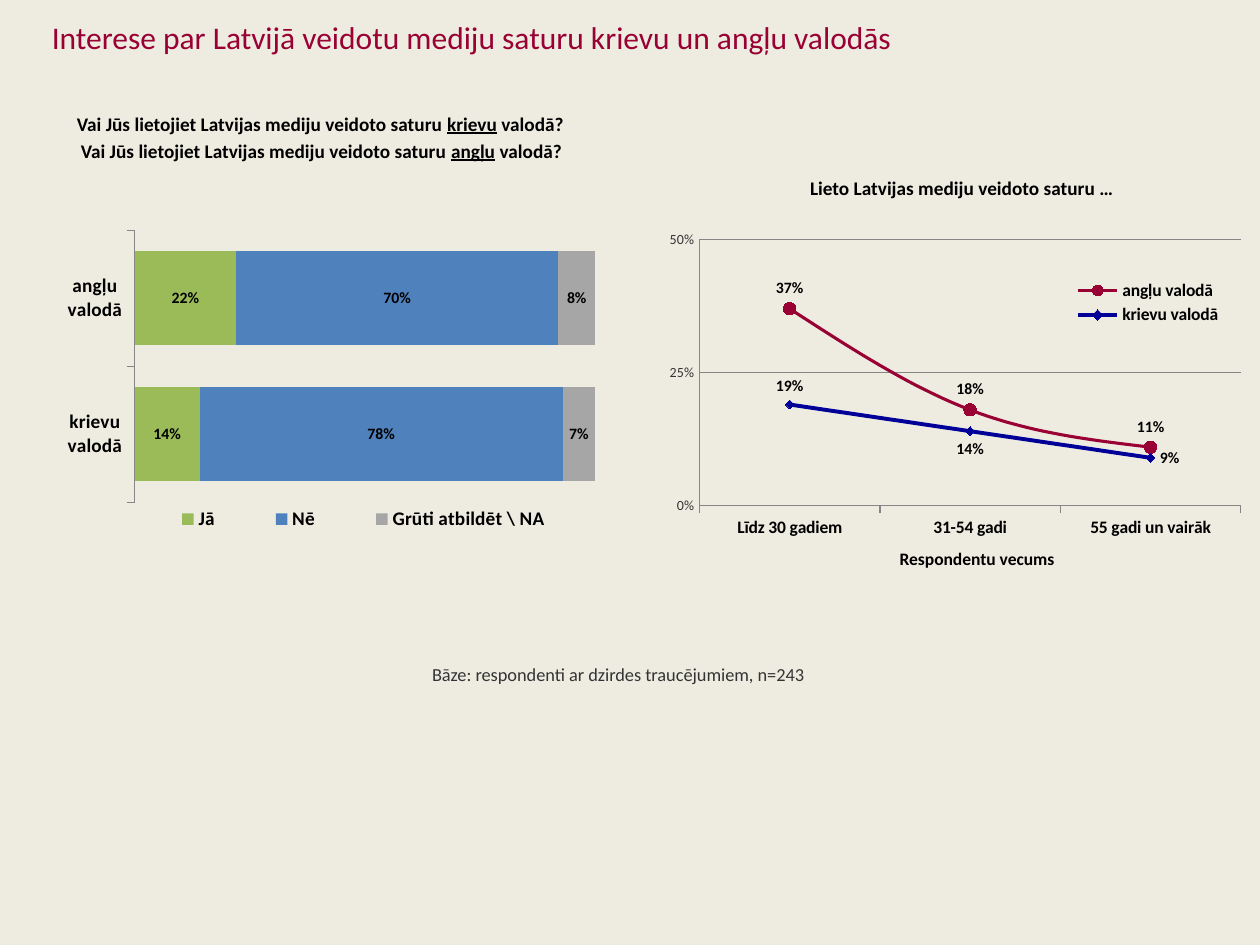
from dataclasses import dataclass

from lxml.etree import SubElement
from pptx import Presentation
from pptx.chart.data import CategoryChartData
from pptx.dml.color import RGBColor
from pptx.enum.chart import XL_CHART_TYPE as ChartType
from pptx.enum.chart import XL_LABEL_POSITION as LabelPosition
from pptx.enum.chart import XL_LEGEND_POSITION as LegendPosition
from pptx.enum.chart import XL_MARKER_STYLE as Marker
from pptx.enum.chart import XL_TICK_LABEL_POSITION as TickLabels
from pptx.enum.chart import XL_TICK_MARK as TickMark
from pptx.enum.text import MSO_ANCHOR as Anchor
from pptx.enum.text import MSO_AUTO_SIZE as AutoSize
from pptx.enum.text import PP_ALIGN as Align
from pptx.oxml.ns import qn
from pptx.util import Cm, Pt


@dataclass(frozen=True)
class Theme:
    """Colours, font and type sizes of the slide."""
    font: str = "Calibri"
    background: str = "EEECE1"
    accent: str = "990033"
    navy: str = "000099"
    text: str = "000000"
    muted: str = "333333"
    axis: str = "868686"
    yes: str = "9BBB59"
    no: str = "4F81BD"
    unsure: str = "A6A6A6"
    title: float = 18
    heading: float = 11
    note: float = 10.5
    small: float = 10
    label: float = 9
    tick: float = 8


@dataclass(frozen=True)
class Box:
    """Rectangle in centimetres."""
    left: float
    top: float
    width: float
    height: float

    def inside(self, left, top, width, height):
        """Return a box placed relative to this one."""
        return Box(self.left + left, self.top + top, width, height)

    def lengths(self):
        """Return the four lengths for python-pptx."""
        return [Cm(value) for value in (self.left, self.top, self.width, self.height)]


THEME = Theme()
LANGUAGES = ("angļu valodā", "krievu valodā")


def format_font(font, size, color=THEME.text, bold=False):
    """Apply the theme font with a size, colour and weight."""
    font.name, font.size, font.bold = THEME.font, Pt(size), bold
    font.color.rgb = RGBColor.from_string(color)


def write_text(shape, paragraphs, size, color=THEME.text, bold=False, align=Align.LEFT,
               anchor=Anchor.TOP, margins=None, indents=()):
    """Write paragraphs made of (text, underlined) runs into a shape."""
    frame = shape.text_frame
    frame.word_wrap, frame.auto_size, frame.vertical_anchor = True, AutoSize.NONE, anchor
    if margins is not None:
        frame.margin_left = frame.margin_right = Cm(margins)
        frame.margin_top = frame.margin_bottom = Cm(margins)
    for index, runs in enumerate(paragraphs):
        paragraph = frame.add_paragraph() if index else frame.paragraphs[0]
        paragraph.alignment = align
        paragraph.space_before = Pt(size * 0.2 if index else 0)
        if index < len(indents):
            paragraph._p.get_or_add_pPr().set("marL", str(Cm(indents[index])))
        for text, underlined in runs:
            run = paragraph.add_run()
            run.text = text
            format_font(run.font, size, color, bold)
            if underlined:
                run.font.underline = True


def add_text(slide, box, paragraphs, **style):
    """Add a text box."""
    write_text(slide.shapes.add_textbox(*box.lengths()), paragraphs, **style)


def set_layout(parent, index, fractions, inner=False):
    """Give a plot area or legend a fixed place within its chart."""
    for old in parent.findall(qn("c:layout")):
        parent.remove(old)
    layout = SubElement(parent, qn("c:layout"))
    parent.insert(index, layout)
    manual = SubElement(layout, qn("c:manualLayout"))
    settings = [("layoutTarget", "inner")] if inner else []
    settings += [("xMode", "edge"), ("yMode", "edge"), *zip("xywh", fractions)]
    for name, value in settings:
        SubElement(manual, qn(f"c:{name}")).set("val", str(value))


def add_chart(slide, box, kind, categories, series, size, plot, legend):
    """Add a percentage chart with a placed plot area and legend."""
    data = CategoryChartData(number_format="0%")
    data.categories = categories
    for name, values in series:
        data.add_series(name, values)
    chart = slide.shapes.add_chart(kind, *box.lengths(), data).chart
    chart.has_title = False
    format_font(chart.font, THEME.title)
    chart.has_legend = True
    chart.legend.position = LegendPosition.RIGHT
    chart.legend.include_in_layout = False
    format_font(chart.legend.font, size, bold=True)
    set_layout(chart._chartSpace.chart.plotArea, 0, plot, inner=True)
    set_layout(chart.legend._element, 1, legend)
    axis = chart.category_axis
    axis.major_tick_mark, axis.minor_tick_mark = TickMark.OUTSIDE, TickMark.NONE
    axis.has_major_gridlines = False
    format_line(axis.format.line, THEME.axis, 0.75)
    format_font(axis.tick_labels.font, size, bold=True)
    chart.plots[0].vary_by_categories = False
    for item in chart.plots[0].series:
        labels = item.data_labels
        labels.show_value = True
        labels.number_format, labels.number_format_is_linked = "0%", False
        format_font(labels.font, THEME.label, bold=True)
    return chart


def format_line(line, color, width):
    """Set the colour and width of a line."""
    line.color.rgb = RGBColor.from_string(color)
    line.width = Pt(width)


def add_usage_panel(slide, box):
    """Place the two questions above the stacked bars."""
    question = "Vai Jūs lietojiet Latvijas mediju veidoto saturu "
    add_text(slide, box.inside(0.41, 0, 12.8, 1.6),
             [[(question, False), (language, True), (" valodā?", False)]
              for language in ("krievu", "angļu")],
             size=THEME.heading, bold=True, indents=(0, 0.08))
    series = [("Jā", (0.14, 0.22)), ("Nē", (0.78, 0.7)),
              ("Grūti atbildēt \\ NA", (0.07, 0.08))]
    chart = add_chart(slide, box.inside(0, 2.29, 11.2, 6.5), ChartType.BAR_STACKED_100,
                      LANGUAGES[::-1], series, THEME.heading,
                      plot=(0.163, 0.034, 0.829, 0.844), legend=(0.15, 0.88, 0.85, 0.1))
    chart.plots[0].gap_width, chart.plots[0].overlap = 45, 100
    axis = chart.value_axis
    axis.has_major_gridlines, axis.visible = False, False
    axis.minimum_scale, axis.maximum_scale = 0, 1
    for item, color in zip(chart.plots[0].series, (THEME.yes, THEME.no, THEME.unsure)):
        item.format.fill.solid()
        item.format.fill.fore_color.rgb = RGBColor.from_string(color)


def add_age_panel(slide, box):
    """Place the heading, the age lines and the axis caption."""
    chart = add_chart(slide, box.inside(0, 1.17, 11.81, 6.4), ChartType.LINE_MARKERS,
                      ("Līdz 30 gadiem", "31-54 gadi", "55 gadi un vairāk"),
                      zip(LANGUAGES, ((0.37, 0.18, 0.11), (0.19, 0.14, 0.09))), THEME.small,
                      plot=(0.067, 0.036, 0.924, 0.839), legend=(0.7, 0.15, 0.265, 0.17))
    axis = chart.value_axis
    axis.minimum_scale, axis.maximum_scale, axis.major_unit = 0, 0.5, 0.25
    axis.major_tick_mark = axis.minor_tick_mark = TickMark.NONE
    axis.tick_label_position = TickLabels.NEXT_TO_AXIS
    axis.tick_labels.number_format, axis.tick_labels.number_format_is_linked = "0%", False
    format_font(axis.tick_labels.font, THEME.tick, THEME.muted)
    format_line(axis.format.line, THEME.axis, 0.75)
    format_line(axis.major_gridlines.format.line, THEME.axis, 0.75)
    styles = [(THEME.accent, 1.75, Marker.CIRCLE, 7, True, LabelPosition.ABOVE),
              (THEME.navy, 2.25, Marker.DIAMOND, 5, False, LabelPosition.BELOW)]
    lines = chart.plots[0].series
    for item, (color, width, marker, size, smooth, position) in zip(lines, styles):
        item.smooth = smooth
        format_line(item.format.line, color, width)
        item.marker.style, item.marker.size = marker, size
        item.marker.format.fill.solid()
        item.marker.format.fill.fore_color.rgb = RGBColor.from_string(color)
        format_line(item.marker.format.line, color, 0.75)
        item.data_labels.position = position
    for index, position in ((0, LabelPosition.ABOVE), (2, LabelPosition.RIGHT)):
        label = lines[1].points[index].data_label
        format_font(label.font, THEME.label, bold=True)
        label.position = position
    captions = [("Lieto Latvijas mediju veidoto saturu …", (0.58, 0, 11, 0.69), THEME.heading),
                ("Respondentu vecums", (2.79, 7.49, 7.19, 0.69), THEME.small)]
    for text, place, size in captions:
        add_text(slide, box.inside(*place), [[(text, False)]],
                 size=size, bold=True, align=Align.CENTER)


def add_title(slide, box, text):
    """Move and format the title placeholder."""
    title = slide.shapes.title
    title.left, title.top, title.width, title.height = box.lengths()
    write_text(title, [[(text, False)]], size=THEME.title, color=THEME.accent,
               anchor=Anchor.MIDDLE)


def main():
    """Build and save the slide."""
    presentation = Presentation()
    presentation.slide_width, presentation.slide_height = Cm(25.4), Cm(19.05)
    slide = presentation.slides.add_slide(presentation.slide_layouts.get_by_name("Title Only"))
    slide.background.fill.solid()
    slide.background.fill.fore_color.rgb = RGBColor.from_string(THEME.background)
    add_title(slide, Box(0.79, 0.18, 23.8, 1.12),
              "Interese par Latvijā veidotu mediju saturu krievu un angļu valodās")
    add_usage_panel(slide, Box(0.89, 2.13, 13.2, 8.79))
    add_age_panel(slide, Box(13.31, 3.43, 11.81, 8.18))
    add_text(slide, Box(8.71, 13.13, 9.6, 0.69),
             [[("Bāze: respondenti ar dzirdes traucējumiem, n=243", False)]],
             size=THEME.note, color=THEME.muted, anchor=Anchor.BOTTOM, margins=0)
    presentation.save("out.pptx")


if __name__ == "__main__":
    main()
